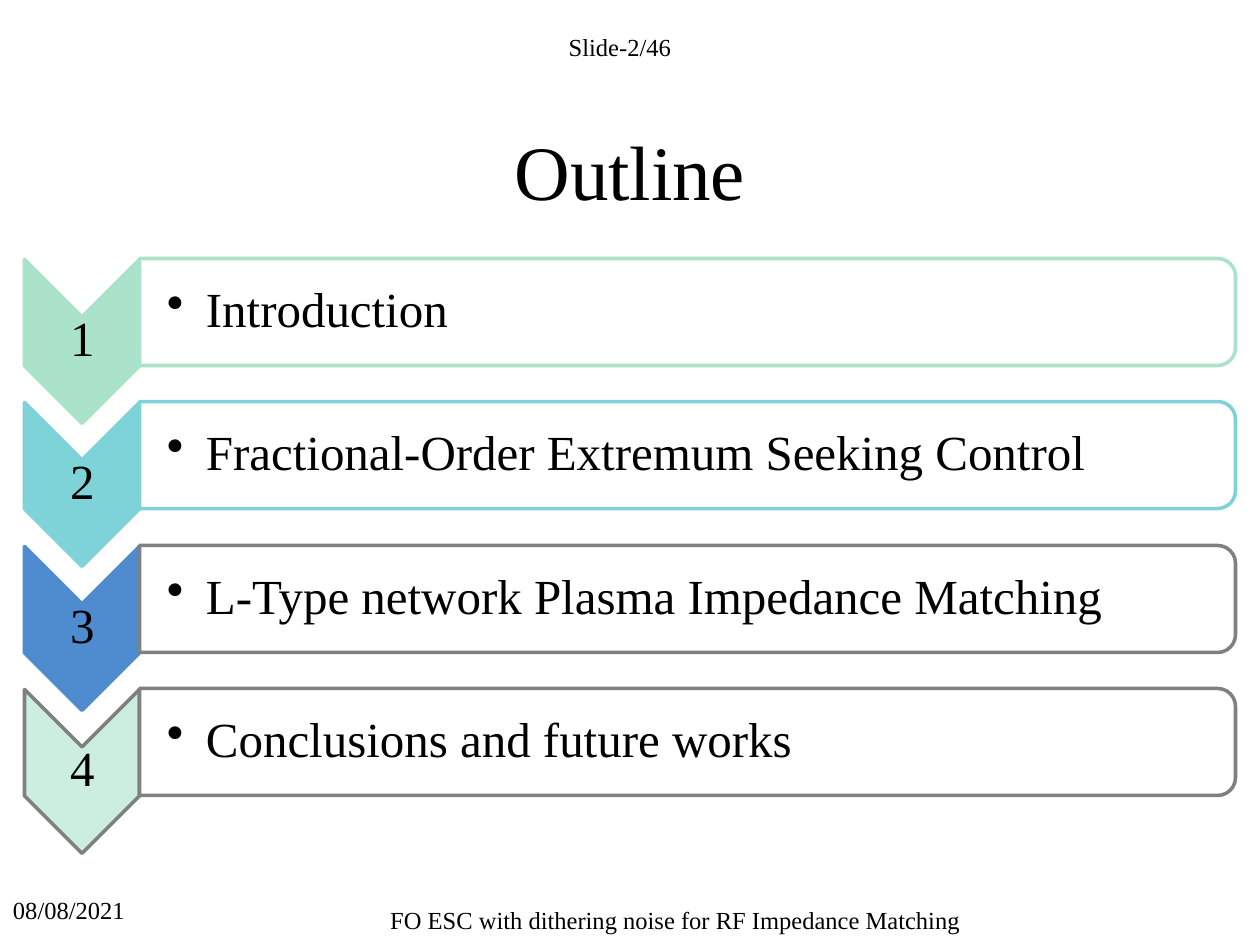
from lxml.etree import SubElement
from pptx import Presentation
from pptx.dml.color import RGBColor
from pptx.enum.shapes import MSO_SHAPE as Shape
from pptx.enum.text import MSO_ANCHOR as Anchor, PP_ALIGN as Align
from pptx.oxml.ns import qn
from pptx.util import Pt

PX = 7257  # EMU per px, 126 px to the inch
rgb = RGBColor.from_string


def write(box, text, size=14, font="Times New Roman", color="000000",
          align=Align.LEFT, anchor=Anchor.TOP, insets=(13, 6, 13, 6),
          line_spacing=None, bullet_indent=0):
    frame = box.text_frame
    frame.word_wrap = True
    frame.vertical_anchor = anchor
    (frame.margin_left, frame.margin_top,
     frame.margin_right, frame.margin_bottom) = [inset * PX for inset in insets]
    paragraph = frame.paragraphs[0]
    paragraph.alignment = align
    paragraph.line_spacing = line_spacing
    if bullet_indent:
        properties = paragraph._p.get_or_add_pPr()
        properties.set("marL", str(bullet_indent * PX))
        properties.set("indent", str(-bullet_indent * PX))
        SubElement(properties, qn("a:buChar"), char="•")
    run = paragraph.add_run()
    run.text = text
    run.font.size = Pt(size)
    run.font.color.rgb = rgb(color)
    run.font.name = font


prs = Presentation()
prs.slide_width, prs.slide_height = 1260 * PX, 945 * PX
slide = prs.slides.add_slide(prs.slide_layouts[5])
shapes = slide.shapes

# Title
title = shapes.title
title.left, title.top, title.width, title.height = 0, 106 * PX, 1260 * PX, 128 * PX
write(title, "Outline", size=44, align=Align.CENTER, anchor=Anchor.MIDDLE)

# Slide count, date and talk name
for text, left, top, width, height, align in [
    ("Slide-2/46", 461, 26, 318, 59, Align.CENTER),
    ("08/08/2021", 0, 889, 262, 55, Align.LEFT),
    ("FO ESC with dithering noise for RF Impedance Matching", 239, 899, 873, 45, Align.CENTER),
]:
    label = shapes.add_textbox(left * PX, top * PX, width * PX, height * PX)
    write(label, text, align=align)

# Outline rows: numbered chevron and rounded bar
sections = [
    ("Introduction", "AAE2CA", "AAE2CA", "AAE2CA"),
    ("Fractional-Order Extremum Seeking Control", "7DD3D7", "7DD3D7", "7DD3D7"),
    ("L-Type network Plasma Impedance Matching", "4F8CCF", "4F8CCF", "808080"),
    ("Conclusions and future works", "CCEEDF", "808080", "808080"),
]
for index, (section, chevron_fill, chevron_line, bar_line) in enumerate(sections):
    row = 259 + index * 287 // 2

    for kind, left, top, width, height, fill, line in [
        (Shape.CHEVRON, 0, row + 25, 164, 115, chevron_fill, chevron_line),
        (Shape.ROUND_2_SAME_RECTANGLE, 634, row - 495, 107, 1096, "FFFFFF", bar_line),
    ]:
        outline = shapes.add_shape(kind, left * PX, top * PX, width * PX, height * PX)
        outline.rotation = 90
        outline.shadow.inherit = False
        outline.fill.solid()
        outline.fill.fore_color.rgb = rgb(fill)
        outline.line.color.rgb = rgb(line)
        outline.line.width = Pt(2)

    number = shapes.add_textbox(25 * PX, (row + 57) * PX, 115 * PX, 49 * PX)
    write(number, str(index + 1), size=28, align=Align.CENTER, anchor=Anchor.MIDDLE,
          insets=(2, 2, 2, 2), line_spacing=0.9)
    topic = shapes.add_textbox(140 * PX, (row + 5) * PX, 1091 * PX, 96 * PX)
    write(topic, section, size=28, anchor=Anchor.MIDDLE, insets=(27, 2, 2, 2),
          line_spacing=0.9, bullet_indent=39)

prs.save("out.pptx")
